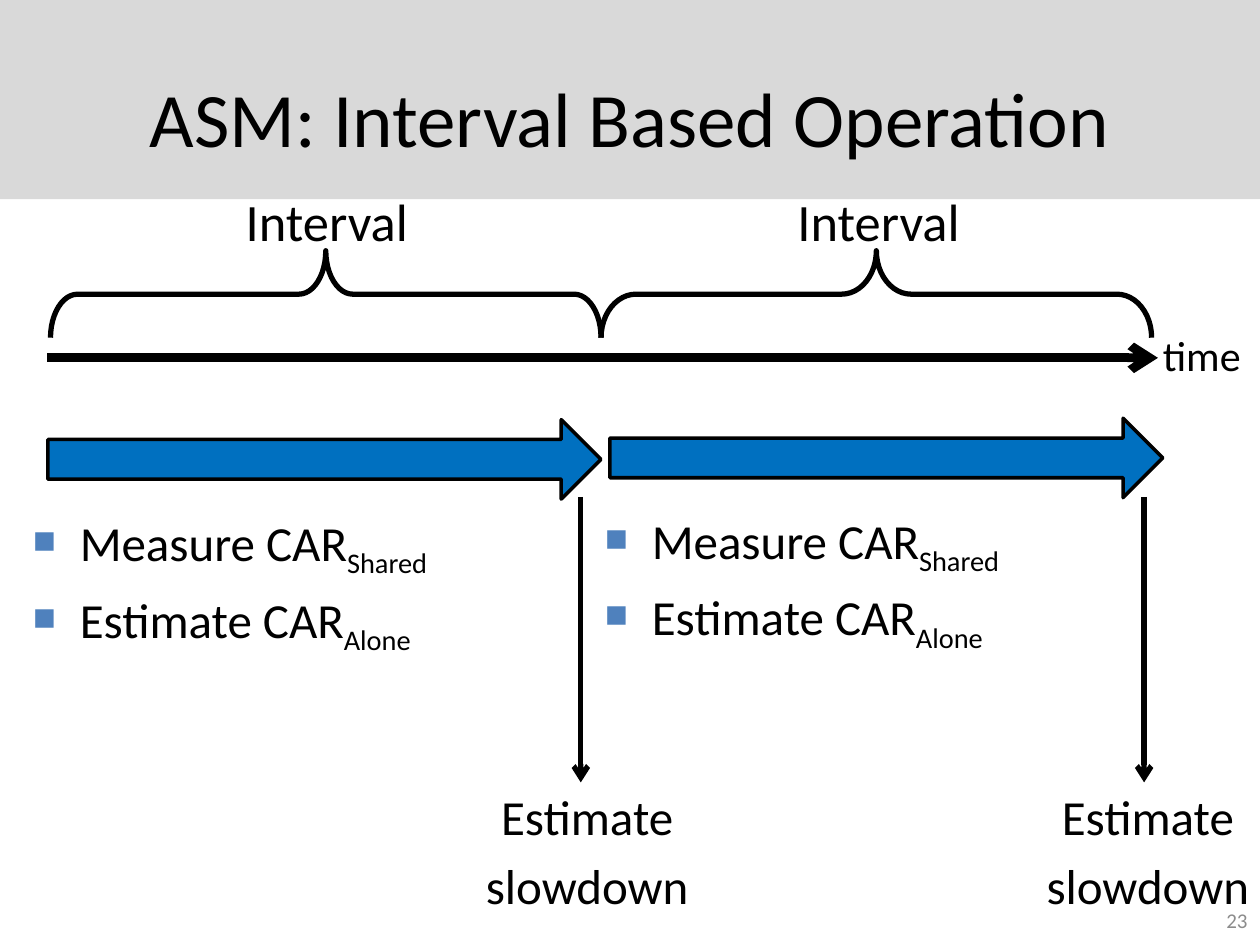
from lxml import etree
from pptx import Presentation
from pptx.dml.color import RGBColor
from pptx.enum.shapes import MSO_CONNECTOR, MSO_SHAPE
from pptx.enum.text import MSO_ANCHOR, PP_ALIGN
from pptx.oxml.ns import qn
from pptx.util import Pt

BLACK = RGBColor(0x00, 0x00, 0x00)
BLUE = RGBColor(0x00, 0x70, 0xC0)
BAND = RGBColor(0xD9, 0xD9, 0xD9)
GRAY = RGBColor(0x8C, 0x8C, 0x8C)
BULLET = RGBColor(0x4F, 0x81, 0xBD)

LEFT, CENTER, RIGHT = PP_ALIGN.LEFT, PP_ALIGN.CENTER, PP_ALIGN.RIGHT
TOP, MIDDLE = MSO_ANCHOR.TOP, MSO_ANCHOR.MIDDLE
RECTANGLE, BRACE, ARROW = MSO_SHAPE.RECTANGLE, MSO_SHAPE.LEFT_BRACE, MSO_SHAPE.RIGHT_ARROW
STRAIGHT = MSO_CONNECTOR.STRAIGHT

MEASURES = [[("Measure CAR", False), ("Shared", True)],
            [("Estimate CAR", False), ("Alone", True)]]
RESULT = [[("Estimate", False)], [("slowdown", False)]]

INTERVALS = [
    {"brace": 161.3, "curve": 0.31, "label": 36.7, "arrow": (27.4, 239.8),
     "drop": 331.9, "result": 253.4, "measures": (11.5, 289.4)},
    {"brace": 475.9, "curve": 0.4, "label": 352, "arrow": (348.5, 239),
     "drop": 653.8, "result": 573.8, "measures": (338.4, 288)},
]


class SlideBuilder:
    font_name = "Calibri"
    indent = Pt(27)

    def __init__(self, slide):
        self.slide = slide

    def shape(self, kind, box, fill=None, line_width=None, rotation=0):
        shape = self.slide.shapes.add_shape(kind, *map(Pt, box))
        shape.shadow.inherit = False
        shape.rotation = rotation
        if fill is None:
            shape.fill.background()
        else:
            shape.fill.solid()
            shape.fill.fore_color.rgb = fill
        if line_width is None:
            shape.line.fill.background()
        else:
            shape.line.color.rgb = BLACK
            shape.line.width = Pt(line_width)
        return shape

    def brace(self, box, curve):
        shape = self.shape(BRACE, box, line_width=3, rotation=90)
        shape.adjustments[0] = curve

    def arrow_line(self, start, end, width):
        connector = self.slide.shapes.add_connector(STRAIGHT, *map(Pt, start + end))
        connector.line.color.rgb = BLACK
        connector.line.width = Pt(width)
        line = connector.line._get_or_add_ln()
        etree.SubElement(line, qn("a:tailEnd"), type="arrow")
        etree.SubElement(connector._element.spPr, qn("a:effectLst"))

    def text(self, box, paragraphs, size, color=BLACK, align=LEFT, anchor=TOP,
             listed=False, bulleted=False):
        frame = self.slide.shapes.add_textbox(*map(Pt, box)).text_frame
        frame.word_wrap = True
        frame.vertical_anchor = anchor
        font_format = {"name": self.font_name, "size": Pt(size)}
        for index, parts in enumerate(paragraphs):
            paragraph = frame.add_paragraph() if index else frame.paragraphs[0]
            paragraph.alignment = align
            if listed:
                self.list_style(paragraph, size, bulleted)
            for content, subscript in parts:
                run = paragraph.add_run()
                run.text = content
                for key, value in font_format.items():
                    setattr(run.font, key, value)
                run.font.color.rgb = color
                if subscript:
                    run._r.get_or_add_rPr().set("baseline", "-25000")

    def list_style(self, paragraph, size, bulleted):
        paragraph.space_before = Pt(size * 0.2)
        properties = paragraph._p.get_or_add_pPr()
        properties.set("marL", str(self.indent))
        properties.set("indent", str(-self.indent))
        if bulleted:
            color = etree.SubElement(properties, qn("a:buClr"))
            etree.SubElement(color, qn("a:srgbClr"), val=str(BULLET))
            etree.SubElement(properties, qn("a:buSzPct"), val="65000")
            etree.SubElement(properties, qn("a:buChar"), char="■")


def main():
    presentation = Presentation()
    presentation.slide_width, presentation.slide_height = Pt(720), Pt(540)
    builder = SlideBuilder(presentation.slides.add_slide(presentation.slide_layouts[6]))

    builder.shape(RECTANGLE, (0, 0, 720, 113.8), fill=BAND)
    builder.text((36, 21.6, 648, 90), [[("ASM: Interval Based Operation", False)]], 44,
                 align=CENTER, anchor=MIDDLE)
    builder.arrow_line((27, 204.5), (661.7, 204.5), 5)
    builder.text((657.4, 185, 71.3, 36), [[("time", False)]], 24)

    for interval in INTERVALS:
        builder.brace((interval["brace"], 10.8, 49.7, 314.6), interval["curve"])
        builder.text((interval["label"], 104.4, 300.2, 43.9), [[("Interval", False)]], 30,
                     align=CENTER)
        builder.shape(ARROW, (*interval["arrow"], 316, 45.4), fill=BLUE, line_width=2)
        builder.arrow_line((interval["drop"], 284), (interval["drop"], 447.1), 3)
        builder.text((interval["result"], 446, 164.2, 51.8), RESULT, 28,
                     align=CENTER, listed=True)
        builder.text((*interval["measures"], 308.2, 103), MEASURES, 28,
                     listed=True, bulleted=True)

    builder.text((552.2, 511.2, 167.8, 28.8), [[("23", False)]], 12, color=GRAY,
                 align=RIGHT, anchor=MIDDLE)
    presentation.save("out.pptx")


if __name__ == "__main__":
    main()
